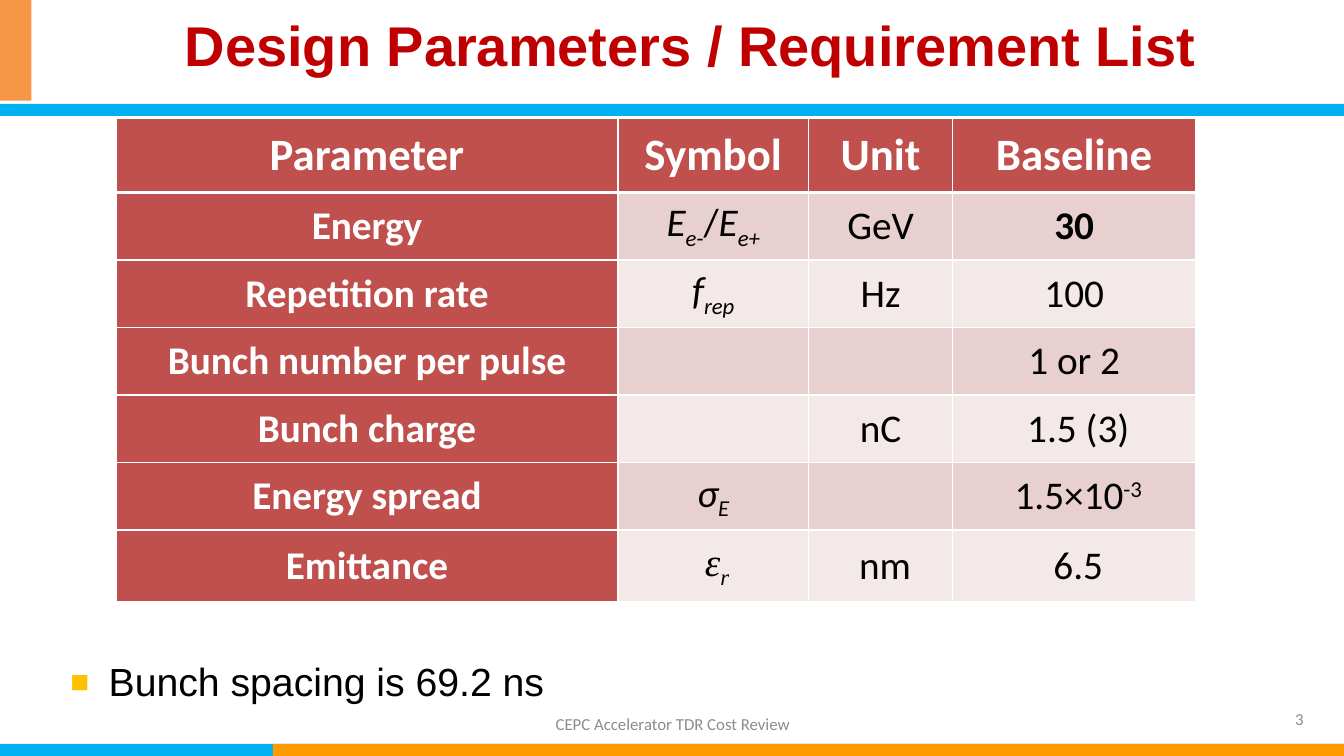
from lxml.etree import SubElement
from pptx import Presentation
from pptx.dml.color import RGBColor
from pptx.enum.shapes import MSO_SHAPE as Shape
from pptx.enum.text import MSO_ANCHOR as Anchor, PP_ALIGN as Align
from pptx.oxml.ns import qn
from pptx.util import Inches, Pt

WIDTH, HEIGHT = Inches(13.33), Inches(7.5)
BLUE, ORANGE, CORAL = "00B0F0", "FF9900", "F79646"
RED, WHITE, BLACK, GREY = "C0504D", "FFFFFF", "000000", "8C8C8C"
BANDS = ("E8D0D0", "F4E9E9")

COLUMN_SHARES = (37.35, 14.18, 10.73, 18.08)
ROW_SHARES = (9.87, *[8.93] * 5, 9.47)
ITALIC = {"italic": True}
SUB = {"italic": True, "baseline": -25}
SERIF = {"name": "Times New Roman"}
HEADINGS = ("Parameter", "Symbol", "Unit", "Baseline")
PARAMETERS = (
    ("Energy",
     [("E", ITALIC), ("e", SUB), ("-", {"baseline": -25}), ("/", {}),
      ("E", ITALIC), ("e+", SUB)],
     "GeV", [("30", {"bold": True})]),
    ("Repetition rate", [("f", ITALIC), ("rep", SUB)], "Hz", "100"),
    ("Bunch number per pulse", "", "", "1 or 2"),
    ("Bunch charge", "", "nC", "1.5 (3)"),
    ("Energy spread", [("σ", ITALIC), ("E", SUB)], "",
     [("1.5×10", {}), ("-3", {"baseline": 30})]),
    ("Emittance",
     [(" ", {"name": "Comic Neue"}), ("ε", ITALIC | SERIF), ("r ", SUB | SERIF)],
     " nm", "6.5"),
)
INDENTED_ROWS = (4, 5, 6)


def color(code):
    return RGBColor.from_string(code)


def across(share):
    return round(WIDTH * share / 100)


def down(share):
    return round(HEIGHT * share / 100)


def area(left, top, width, height):
    return across(left), down(top), across(width), down(height)


def add_span(para, text, size=28, ink=BLACK, name="Calibri", bold=False,
             italic=False, baseline=0):
    span = para.add_run()
    span.text = text
    font = span.font
    font.size, font.name, font.bold, font.italic = Pt(size), name, bold, italic
    font.color.rgb = color(ink)
    if baseline:
        font._element.set("baseline", str(baseline * 1000))


def write(frame, content, align=Align.CENTER, anchor=Anchor.MIDDLE,
          spacing=None, **style):
    frame.word_wrap = True
    frame.vertical_anchor = anchor
    para = frame.paragraphs[0]
    para.alignment = align
    if spacing:
        para.line_spacing = spacing
    spans = [(content, {})] if isinstance(content, str) else content
    for text, changes in spans:
        if text:
            add_span(para, text, **(style | changes))
    return para


def add_text(page, place, content, **style):
    box = page.shapes.add_textbox(*place)
    return write(box.text_frame, content, **style)


def add_bar(page, place, fill):
    bar = page.shapes.add_shape(Shape.RECTANGLE, *place)
    bar.shadow.inherit = False
    bar.fill.solid()
    bar.fill.fore_color.rgb = color(fill)
    bar.line.fill.background()


def indent(para, margin, first):
    props = para._p.get_or_add_pPr()
    props.set("marL", str(Inches(margin)))
    props.set("indent", str(Inches(first)))
    return props


def add_bullet(para, symbol, ink, percent):
    props = indent(para, 0.38, -0.38)
    tint = SubElement(props, qn("a:buClr"))
    SubElement(tint, qn("a:srgbClr"), val=ink)
    SubElement(props, qn("a:buSzPct"), val=str(percent * 1000))
    SubElement(props, qn("a:buFont"), typeface="Arial")
    SubElement(props, qn("a:buChar"), char=symbol)


def add_borders(cell, **widths):
    props = cell._tc.get_or_add_tcPr()
    for side, width in widths.items():
        line = SubElement(props, qn(f"a:ln{side}"), w=str(Pt(width)))
        fill = SubElement(line, qn("a:solidFill"))
        SubElement(fill, qn("a:srgbClr"), val=WHITE)


def format_cell(cell, content, row, column):
    heading = row == 0 or column == 0
    cell.margin_left = cell.margin_right = Inches(0.06)
    cell.margin_top = cell.margin_bottom = 0
    cell.vertical_anchor = Anchor.MIDDLE
    add_borders(cell, L=1, R=1, T=3 if row == 1 else 1, B=3 if row == 0 else 1)
    cell.fill.solid()
    cell.fill.fore_color.rgb = color(RED if heading else BANDS[(row - 1) % 2])
    para = write(cell.text_frame, content, size=28 if row else 32,
                 ink=WHITE if heading else BLACK, bold=heading)
    if column == 3 and row in INDENTED_ROWS:
        indent(para, 0, 0.08)


def add_parameter_table(page):
    rows = (HEADINGS, *PARAMETERS)
    place = area(8.63, 15.6, sum(COLUMN_SHARES), sum(ROW_SHARES))
    table = page.shapes.add_table(len(rows), len(HEADINGS), *place).table
    for column, share in zip(table.columns, COLUMN_SHARES):
        column.width = across(share)
    for row, share in zip(table.rows, ROW_SHARES):
        row.height = down(share)
    for row, contents in enumerate(rows):
        for column, content in enumerate(contents):
            format_cell(table.cell(row, column), content, row, column)


def set_title(page, place, text):
    title = page.shapes.title
    title.left, title.top, title.width, title.height = place
    title.fill.solid()
    title.fill.fore_color.rgb = color(WHITE)
    write(title.text_frame, text, spacing=0.9, size=40, ink="C00000",
          name="Arial", bold=True)


def main():
    deck = Presentation()
    deck.slide_width, deck.slide_height = WIDTH, HEIGHT
    page = deck.slides.add_slide(deck.slide_layouts[5])

    add_bar(page, area(0, 98.4, 100, 1.6), BLUE)
    add_bar(page, area(20.3, 98.4, 79.7, 1.6), ORANGE)
    add_bar(page, area(0, 13.73, 100, 1.6), BLUE)
    add_bar(page, area(0, 0, 2.33, 13.33), CORAL)
    set_title(page, area(3.38, 1.07, 95.93, 10.67),
              "Design Parameters / Requirement List")
    add_text(page, area(74.4, 92.4, 23.33, 5.33), "3",
             align=Align.RIGHT, size=12, ink=GREY)
    add_text(page, area(29.4, 93.07, 41.33, 5.2),
             "CEPC Accelerator TDR Cost Review", size=12, ink=GREY)
    note = add_text(page, area(4.5, 85.73, 90, 9.33), "Bunch spacing is 69.2 ns",
                    align=Align.LEFT, anchor=Anchor.TOP, spacing=1.1, name="Arial")
    add_bullet(note, "■", "FFC000", 80)
    add_parameter_table(page)
    deck.save("out.pptx")


if __name__ == "__main__":
    main()
